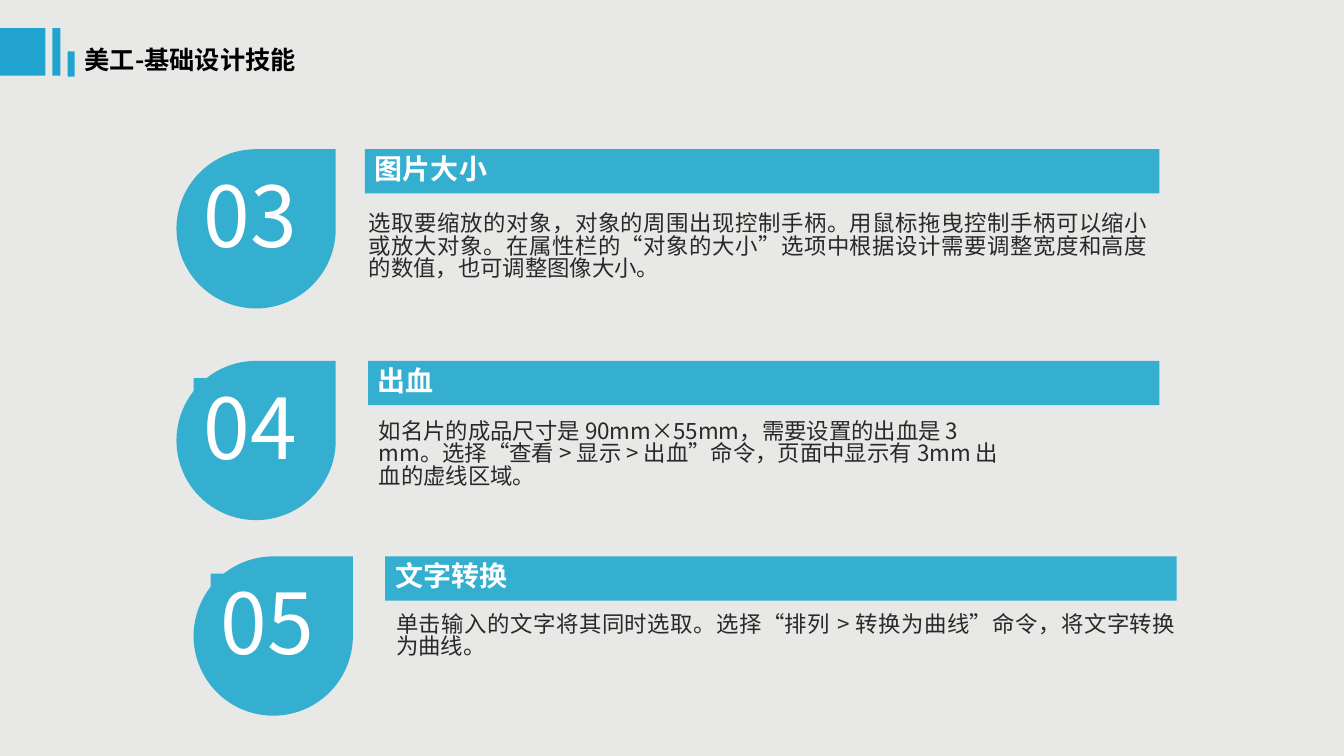
from dataclasses import dataclass

from lxml.etree import SubElement
from pptx import Presentation
from pptx.dml.color import RGBColor
from pptx.enum.shapes import MSO_SHAPE as Shape
from pptx.enum.text import MSO_ANCHOR as Anchor, MSO_AUTO_SIZE as AutoSize, PP_ALIGN as Align
from pptx.oxml.ns import qn
from pptx.util import Inches, Pt

TITLE = "美工-基础设计技能"

# number, heading, paragraphs, row top, row indent, bar left, body left,
# body drop, body height, number has a filled box
SKILLS = [
    ("03", "图片大小",
     ["选取要缩放的对象，对象的周围出现控制手柄。用鼠标拖曳控制手柄可以缩小或放大对象。"
      "在属性栏的“对象的大小”选项中根据设计需要调整宽度和高度的数值，也可调整图像大小。"],
     1.48, 0, 3.62, 3.56, 0.52, 0.91, False),
    ("04", "出血",
     ["如名片的成品尺寸是 90mm×55mm，需要设置的出血是 3",
      "mm。选择“查看 > 显示 > 出血”命令，页面中显示有 3mm 出",
      "血的虚线区域。"],
     3.58, 0, 3.65, 3.66, 0.48, 0.91, True),
    ("05", "文字转换",
     ["单击输入的文字将其同时选取。选择“排列 > 转换为曲线”命令，将文字转换为曲线。"],
     5.52, 0.17, 3.65, 3.66, 0.48, 0.64, True),
]
TITLE_BARS = [(0, 0.28, 0.45, 0.47), (0.52, 0.28, 0.08, 0.47), (0.67, 0.51, 0.07, 0.25)]

DROP_LEFT, DROP_SIZE = 1.75, 1.58
NUMBER_INSET = 0.17
BAR_RIGHT, BAR_HEIGHT = 11.5, 0.44
BODY_WIDTH = 7.93


@dataclass(frozen=True)
class Theme:
    font: str = "Noto Sans CJK SC"
    background: RGBColor = RGBColor(0xE8, 0xE8, 0xE6)
    accent: RGBColor = RGBColor(0x35, 0xAF, 0xD0)
    title_bar: RGBColor = RGBColor(0x21, 0xA3, 0xD0)
    title: RGBColor = RGBColor(0, 0, 0)
    body: RGBColor = RGBColor(0x29, 0x29, 0x29)
    light: RGBColor = RGBColor(0xFF, 0xFF, 0xFF)
    title_size: int = 18
    heading_size: int = 20
    body_size: int = 16
    number_size: int = 60
    line_spacing: float = 0.83


THEME = Theme()


def write(holder, paragraphs, size, color, bold=False, align=Align.LEFT, wrap=True):
    frame = holder.text_frame
    frame.text = "\n".join(paragraphs)
    frame.word_wrap = wrap
    frame.auto_size = AutoSize.NONE
    frame.vertical_anchor = Anchor.MIDDLE
    for paragraph in frame.paragraphs:
        paragraph.alignment = align
        paragraph.line_spacing = THEME.line_spacing
        font = paragraph.font
        font.name, font.size, font.bold = THEME.font, Pt(size), bold
        font.color.rgb = color
        east_asian = SubElement(font._element, qn("a:ea"))
        east_asian.set("typeface", THEME.font)


def add_filled(slide, kind, box, color):
    shape = slide.shapes.add_shape(kind, *map(Inches, box))
    shape.shadow.inherit = False
    shape.fill.solid()
    shape.fill.fore_color.rgb = color
    shape.line.fill.background()
    return shape


def add_title(slide):
    for box in TITLE_BARS:
        add_filled(slide, Shape.RECTANGLE, box, THEME.title_bar)
    title = slide.shapes.title
    title.left, title.top, title.width, title.height = map(Inches, (0.74, 0.41, 3.61, 0.4))
    write(title, [TITLE], THEME.title_size, THEME.title, bold=True)


def add_skill(slide, number, heading, paragraphs, top, indent, bar_left, body_left,
              body_drop, body_height, number_filled):
    drop_left = DROP_LEFT + indent
    add_filled(slide, Shape.TEAR, (drop_left, top, DROP_SIZE, DROP_SIZE), THEME.accent)

    number_box = (drop_left + NUMBER_INSET, top + NUMBER_INSET, 1.18, 1.11)
    if number_filled:
        label = add_filled(slide, Shape.RECTANGLE, number_box, THEME.accent)
    else:
        label = slide.shapes.add_textbox(*map(Inches, number_box))
    write(label, [number], THEME.number_size, THEME.light, wrap=False)

    bar_box = (bar_left + indent, top, BAR_RIGHT - bar_left, BAR_HEIGHT)
    bar = add_filled(slide, Shape.RECTANGLE, bar_box, THEME.accent)
    write(bar, [heading], THEME.heading_size, THEME.light, bold=True)

    body_box = (body_left + indent, top + body_drop, BODY_WIDTH, body_height)
    body = slide.shapes.add_textbox(*map(Inches, body_box))
    write(body, paragraphs, THEME.body_size, THEME.body, align=Align.JUSTIFY)


def main():
    deck = Presentation()
    deck.slide_width, deck.slide_height = Inches(13.33), Inches(7.5)
    slide = deck.slides.add_slide(deck.slide_layouts[5])
    slide.background.fill.solid()
    slide.background.fill.fore_color.rgb = THEME.background
    add_title(slide)
    for skill in SKILLS:
        add_skill(slide, *skill)
    deck.save("out.pptx")


if __name__ == "__main__":
    main()
